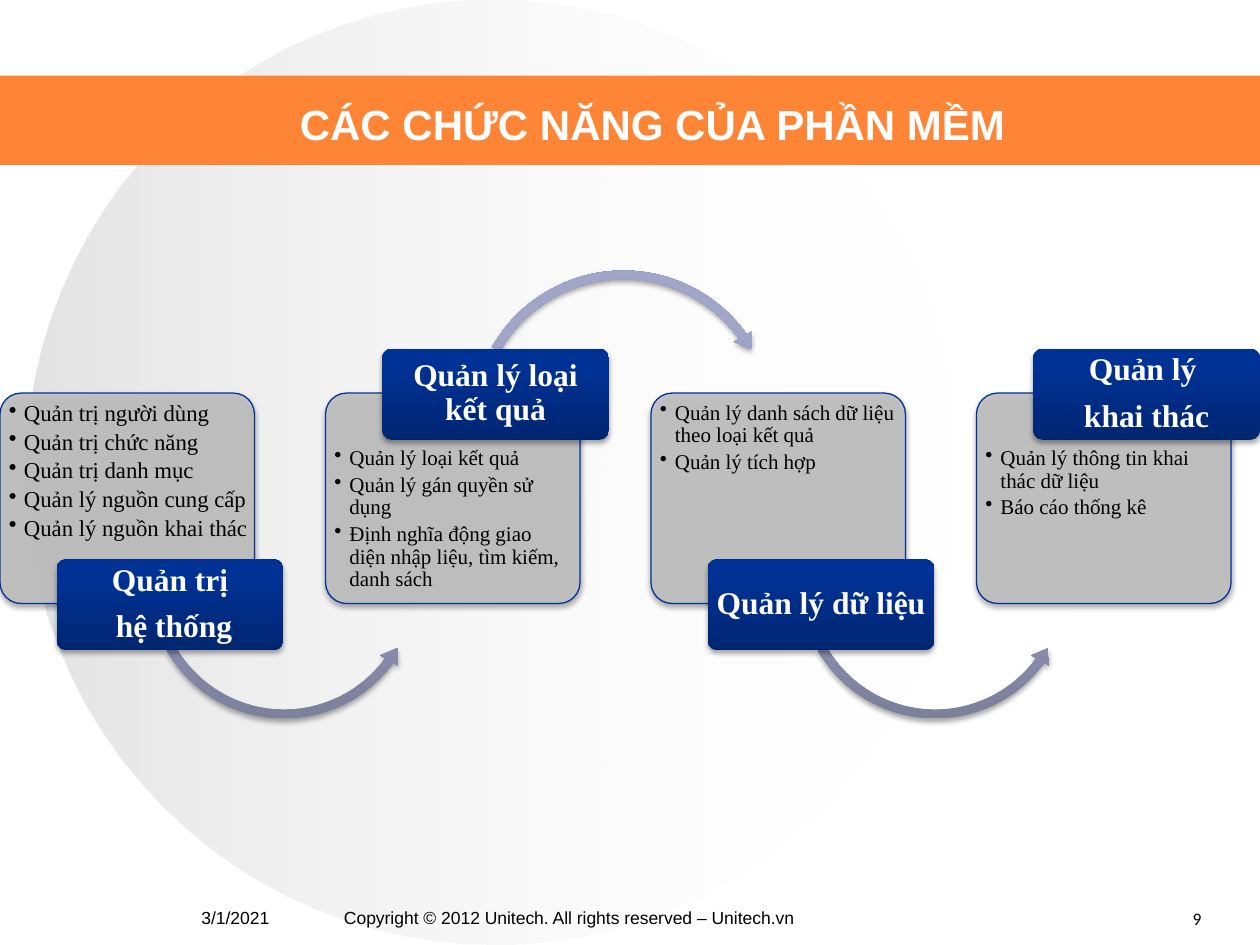
from lxml import etree
from pptx import Presentation
from pptx.dml.color import RGBColor
from pptx.enum.shapes import MSO_SHAPE as SHAPE
from pptx.enum.text import MSO_ANCHOR as ANCHOR, PP_ALIGN as ALIGN
from pptx.oxml import parse_xml
from pptx.oxml.ns import nsdecls, qn
from pptx.util import Inches, Pt

WHITE = RGBColor(0xFF, 0xFF, 0xFF)
BLACK = RGBColor(0, 0, 0)
ORANGE = RGBColor(0xFF, 0x85, 0x36)
SILVER = RGBColor(0xC0, 0xC0, 0xC0)
NAVY = RGBColor(0, 0x33, 0x99)
LABEL_STOPS = [(0, RGBColor(0, 0x26, 0x72), 100), (80, RGBColor(0, 0x31, 0x94), 100),
               (100, RGBColor(0, 0x32, 0x95), 100)]
ARROW_STOPS = [(0, RGBColor(0x7C, 0x7F, 0x9A), 100), (80, RGBColor(0xA1, 0xA5, 0xC8), 100),
               (100, RGBColor(0xA1, 0xA5, 0xCA), 100)]
DISC_STOPS = [(0, SILVER, 44), (100, WHITE, 0)]
SERIF = "Times New Roman"

prs = Presentation()
prs.slide_width, prs.slide_height = Inches(10), Inches(7.5)
s = prs.slides.add_slide(prs.slide_layouts[6])
CELL = prs.slide_width / 100


def add_shape(kind, x, y, w, h, stops, angle=270, adj=(), line=None, shadow=True):
    sp = s.shapes.add_shape(kind, *(round(v * CELL) for v in (x, y, w, h)))
    for n, value in enumerate(adj):
        sp.adjustments[n] = value
    colors = [f'<a:srgbClr val="{c}"><a:alpha val="{a * 1000}"/></a:srgbClr>' for _, c, a in stops]
    if len(stops) == 1:
        fill = f'<a:solidFill {nsdecls("a")}>{colors[0]}</a:solidFill>'
    else:
        gs = "".join(f'<a:gs pos="{st[0] * 1000}">{c}</a:gs>' for st, c in zip(stops, colors))
        fill = (f'<a:gradFill {nsdecls("a")} rotWithShape="1"><a:gsLst>{gs}</a:gsLst>'
                f'<a:lin ang="{angle * 60000}" scaled="0"/></a:gradFill>')
    sp._element.spPr.find(qn("a:prstGeom")).addnext(parse_xml(fill))
    if line:
        sp.line.color.rgb, sp.line.width = line, Pt(0.75)
    else:
        sp.line.fill.background()
    sp.shadow.inherit = False
    if shadow:
        sp._element.spPr.find(qn("a:effectLst")).append(parse_xml(
            f'<a:outerShdw {nsdecls("a")} blurRad="{Pt(3.1)}" dist="{Pt(1.8)}" dir="5400000" '
            'rotWithShape="0"><a:srgbClr val="000000"><a:alpha val="35000"/></a:srgbClr></a:outerShdw>'))
    return sp


def add_text(x, y, w, h, lines, size, font, color=BLACK, bold=False, align=ALIGN.LEFT,
             anchor=ANCHOR.TOP, inset=(1, 0.5), spacing=None, after=None, bullet=False):
    sp = s.shapes.add_textbox(*(round(v * CELL) for v in (x, y, w, h)))
    tf = sp.text_frame
    dx, dy = (round(v * CELL) for v in inset)
    frame = {"word_wrap": True, "vertical_anchor": anchor, "margin_left": dx,
             "margin_right": dx, "margin_top": dy, "margin_bottom": dy}
    for key, value in frame.items():
        setattr(tf, key, value)
    for n, line in enumerate(lines):
        p = tf.paragraphs[0] if n == 0 else tf.add_paragraph()
        for key, value in {"alignment": align, "line_spacing": spacing, "space_after": after}.items():
            setattr(p, key, value)
        if bullet:
            pPr = p._p.get_or_add_pPr()
            pPr.set("marL", str(Inches(0.12)))
            pPr.set("indent", str(-Inches(0.12)))
            etree.SubElement(pPr, qn("a:buChar")).set("char", "•")
        r = p.add_run()
        r.text = line
        for key, value in {"size": Pt(size), "name": font, "bold": bold}.items():
            setattr(r.font, key, value)
        r.font.color.rgb = color


add_shape(SHAPE.OVAL, 2, 0, 74.4, 75, DISC_STOPS, angle=0, shadow=False)
add_shape(SHAPE.RECTANGLE, 0, 6, 100, 7.1, [(0, ORANGE, 100)], shadow=False)
add_text(22.5, 7.1, 68.3, 5.4, ["CÁC CHỨC NĂNG CỦA PHẦN MỀM"], 24, "Arial", WHITE, True,
         inset=(1.3, 0.7))

CARD_W, CARD_H, CARD_Y = 20.2, 16.7, 31.2
LABEL_W, LABEL_H, LABEL_DX = 18, 7.2, 4.5
PITCH = (100 - LABEL_DX - LABEL_W) / 3
LOWER_ARROW = (SHAPE.LEFT_CIRCULAR_ARROW, 11.4, 35.2, 22.3, (0.032, 3.88, 21.635, 90.245, 0.037))
UPPER_ARROW = (SHAPE.CIRCULAR_ARROW, 11.2, 21, 24.9, (0.028, 3.451, 194.794, 125.755, 0.033))

steps = [
    (["Quản trị", " hệ thống"], 13,
     ["Quản trị người dùng", "Quản trị chức năng", "Quản trị danh mục",
      "Quản lý nguồn cung cấp", "Quản lý nguồn khai thác"]),
    (["Quản lý loại kết quả"], 12,
     ["Quản lý loại kết quả", "Quản lý gán quyền sử dụng",
      "Định nghĩa động giao diện nhập liệu, tìm kiếm, danh sách"]),
    (["Quản lý dữ liệu"], 12,
     ["Quản lý danh sách dữ liệu theo loại kết quả", "Quản lý tích hợp"]),
    (["Quản lý ", "khai thác"], 12,
     ["Quản lý thông tin khai thác dữ liệu", "Báo cáo thống kê"]),
]
for i, (label, size, items) in enumerate(steps):
    x, upper = i * PITCH, i % 2 == 1
    label_x, label_y = x + LABEL_DX, 27.7 if upper else 44.4
    add_shape(SHAPE.ROUNDED_RECTANGLE, x, CARD_Y, CARD_W, CARD_H, [(0, SILVER, 90)],
              adj=[0.1], line=NAVY)
    add_text(x + 0.4, 35.2 if upper else 31.6, 19.5, 12.3, items, size, SERIF,
             inset=(0.3, 0.3), spacing=0.9, after=Pt(2.3), bullet=True)
    if i < len(steps) - 1:
        kind, dx, y, side, adj = UPPER_ARROW if upper else LOWER_ARROW
        add_shape(kind, x + dx, y, side, side, ARROW_STOPS, adj=adj)
    add_shape(SHAPE.ROUNDED_RECTANGLE, label_x, label_y, LABEL_W, LABEL_H, LABEL_STOPS, adj=[0.1])
    add_text(label_x + 0.2, label_y + 0.2, 17.6, 6.7, label, 18, SERIF, WHITE, True,
             ALIGN.CENTER, ANCHOR.MIDDLE, (0.4, 0.3), 0.9, Pt(7))

add_text(90.4, 71.6, 9.2, 2.9, ["9"], 10, "Calibri", align=ALIGN.CENTER)
add_text(25.3, 71.5, 39.7, 2.7, ["Copyright © 2012 Unitech. All rights reserved – Unitech.vn"],
         10, "Arial", align=ALIGN.CENTER)
add_text(15, 71.5, 12.8, 2.9, ["3/1/2021"], 10, "Arial")

prs.save("out.pptx")
